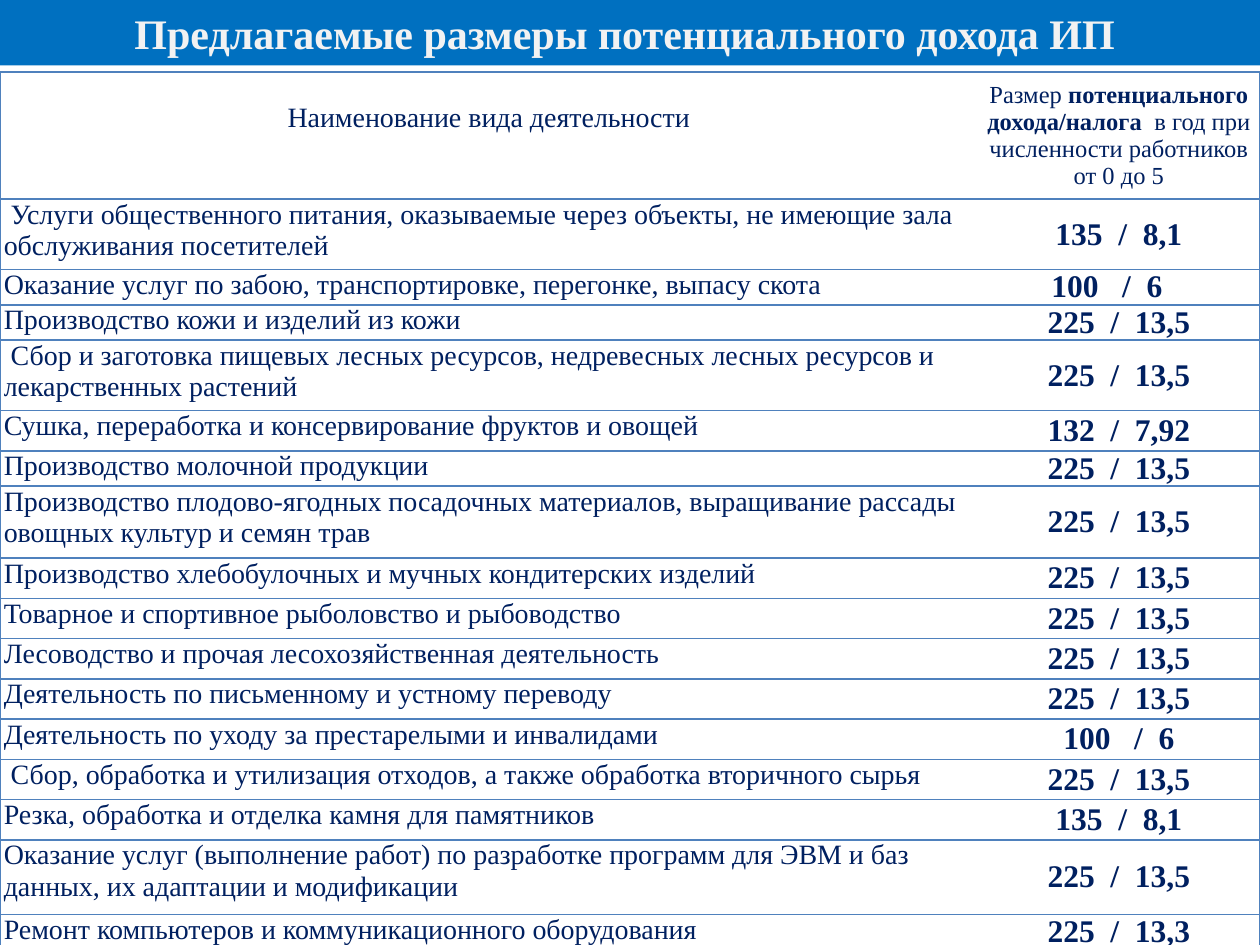
from dataclasses import dataclass

from lxml import etree
from pptx import Presentation, util as u
from pptx.dml import color
from pptx.enum import shapes, text
from pptx.oxml import ns

FONT = "Times New Roman"
NAVY, BLUE, BORDER, WHITE, PALE = "002060", "0070C0", "4F81BD", "FFFFFF", "F2F2F2"
LEFT, CENTER = text.PP_ALIGN.LEFT, text.PP_ALIGN.CENTER
TOP, MIDDLE = text.MSO_ANCHOR.TOP, text.MSO_ANCHOR.MIDDLE
PAD = 0.03


@dataclass
class Activity:
    name: str
    income: str = "225  /  13,5"
    height: float = 0.32
    right_pad: float = PAD


ACTIVITIES = [
    Activity(" Услуги общественного питания, оказываемые через объекты, не имеющие зала обслуживания посетителей",
             "135  /  8,1", 0.56),
    Activity("Оказание услуг по забою, транспортировке, перегонке, выпасу скота",
             "100   /  6", 0.28, right_pad=0.22),
    Activity("Производство кожи и изделий из кожи", height=0.28),
    Activity(" Сбор и заготовка пищевых лесных ресурсов, недревесных лесных ресурсов и лекарственных растений",
             height=0.56),
    Activity("Сушка, переработка и консервирование фруктов и овощей", "132  /  7,92"),
    Activity("Производство молочной продукции", height=0.28),
    Activity("Производство плодово-ягодных посадочных материалов, выращивание рассады овощных культур и семян трав",
             height=0.57),
    Activity("Производство хлебобулочных и мучных кондитерских изделий"),
    Activity("Товарное и спортивное рыболовство и рыбоводство"),
    Activity("Лесоводство и прочая лесохозяйственная деятельность"),
    Activity("Деятельность по письменному и устному переводу"),
    Activity("Деятельность по уходу за престарелыми и инвалидами", "100   /  6"),
    Activity(" Сбор, обработка и утилизация отходов, а также обработка вторичного сырья"),
    Activity("Резка, обработка и отделка камня для памятников", "135  /  8,1"),
    Activity("Оказание услуг (выполнение работ) по разработке программ для ЭВМ и баз данных, их адаптации и модификации",
             height=0.59),
    Activity("Ремонт компьютеров и коммуникационного оборудования", "225  /  13,3", 0.27),
]


def rgb(value: str) -> color.RGBColor:
    return color.RGBColor.from_string(value)


def add_text(p, content: str, *, size: float, ink: str = NAVY, bold: bool = False, align=LEFT) -> None:
    p.alignment = align
    r = p.add_run()
    r.text = content
    r.font.name, r.font.size, r.font.bold = FONT, u.Pt(size), bold
    r.font.color.rgb = rgb(ink)


def set_borders(cell, sides: str) -> None:
    """Outline the named sides of a cell and clear the others."""
    tc_pr = cell._tc.get_or_add_tcPr()
    for index, side in enumerate("LRTB"):
        ln = etree.Element(ns.qn(f"a:ln{side}"), w=str(u.Pt(1)))
        if side in sides:
            fill = etree.SubElement(ln, ns.qn("a:solidFill"))
            etree.SubElement(fill, ns.qn("a:srgbClr"), val=BORDER)
        else:
            etree.SubElement(ln, ns.qn("a:noFill"))
        tc_pr.insert(index, ln)


def style_cell(cell, sides: str, *, anchor=TOP, top: float = 0, right: float = PAD):
    cell.fill.solid()
    cell.fill.fore_color.rgb = rgb(WHITE)
    cell.vertical_anchor = anchor
    cell.margin_left, cell.margin_right = u.Inches(PAD), u.Inches(right)
    cell.margin_top, cell.margin_bottom = u.Inches(top), u.Inches(0)
    set_borders(cell, sides)
    return cell.text_frame.paragraphs[0]


def add_title(s) -> None:
    sp = s.shapes.add_shape(shapes.MSO_SHAPE.RECTANGLE, 0, 0, u.Inches(10), u.Inches(0.52))
    sp.shadow.inherit = False
    sp.fill.solid()
    sp.fill.fore_color.rgb = rgb(BLUE)
    sp.line.fill.background()
    tf = sp.text_frame
    tf.word_wrap, tf.vertical_anchor = True, MIDDLE
    add_text(tf.paragraphs[0], "Предлагаемые размеры потенциального дохода ИП ",
             size=24, ink=PALE, bold=True, align=CENTER)


def add_income_table(s) -> None:
    heights = [1.01] + [a.height for a in ACTIVITIES]
    frame = s.shapes.add_table(len(heights), 2, 0, u.Inches(0.57), u.Inches(10), u.Inches(sum(heights)))
    table = frame.table
    table.first_row = table.horz_banding = False
    for column, width in zip(table.columns, (7.76, 2.24)):
        column.width = u.Inches(width)
    for row, height in zip(table.rows, heights):
        row.height = u.Inches(height)

    p = style_cell(table.cell(0, 0), "LTB", top=0.24)
    add_text(p, "Наименование вида деятельности", size=16, align=CENTER)
    p = style_cell(table.cell(0, 1), "RTB", anchor=MIDDLE)
    for content, bold in (("Размер ", False), ("потенциального дохода/налога", True),
                          ("  в год при численности работников от 0 до 5", False)):
        add_text(p, content, size=14, bold=bold, align=CENTER)

    for row, activity in enumerate(ACTIVITIES, 1):
        p = style_cell(table.cell(row, 0), "LTB")
        add_text(p, activity.name, size=16)
        p = style_cell(table.cell(row, 1), "RTB", anchor=MIDDLE, right=activity.right_pad)
        add_text(p, activity.income, size=18, bold=True, align=CENTER)


def main() -> None:
    prs = Presentation()
    prs.slide_width, prs.slide_height = u.Inches(10), u.Inches(7.5)
    s = prs.slides.add_slide(prs.slide_layouts[6])
    add_title(s)
    add_income_table(s)
    prs.save("out.pptx")


if __name__ == "__main__":
    main()
